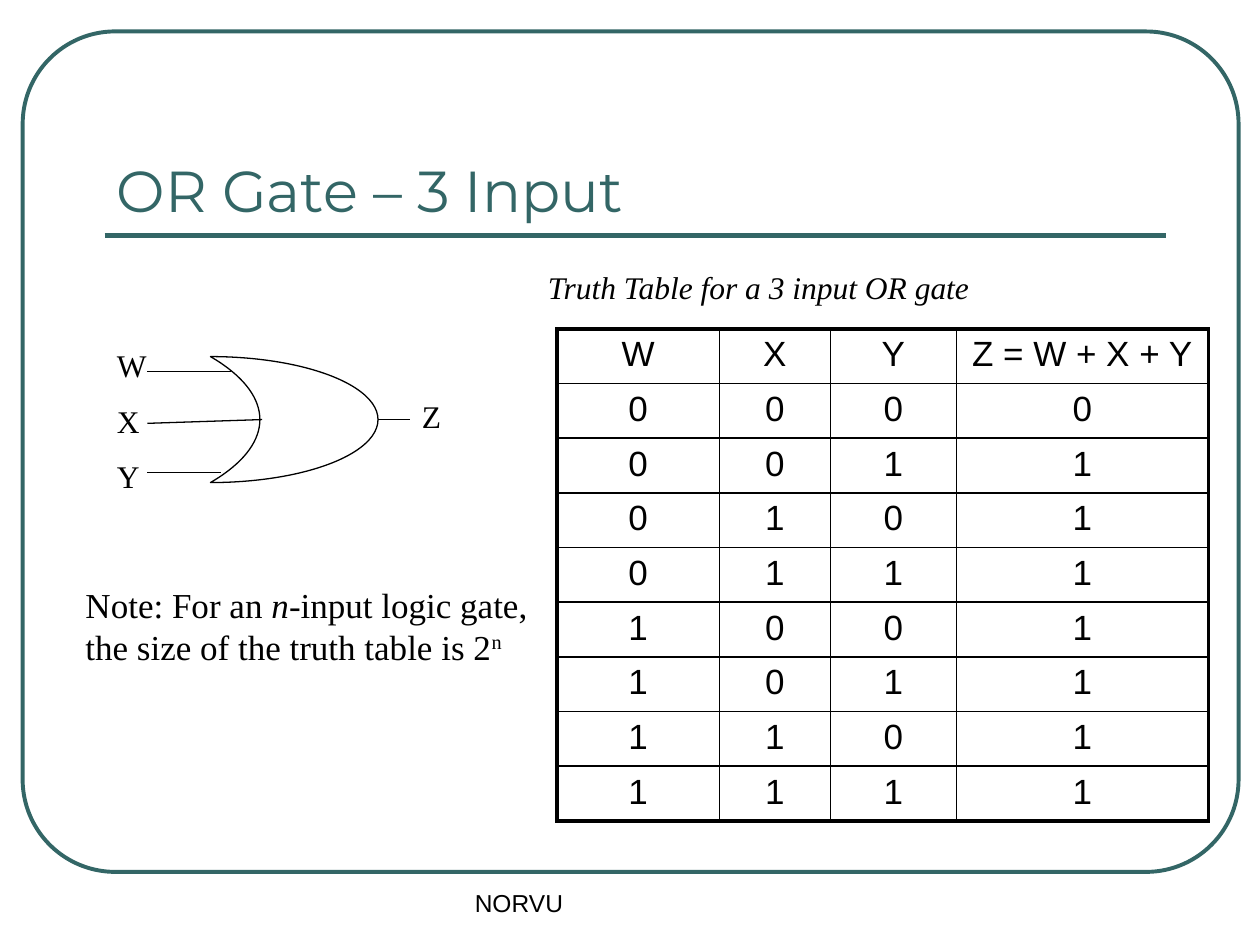
from itertools import product

from lxml import etree
from pptx import Presentation
from pptx.dml.color import RGBColor
from pptx.enum.shapes import MSO_CONNECTOR as Connector, MSO_SHAPE as Shape
from pptx.enum.text import MSO_ANCHOR as Anchor, PP_ALIGN as Align
from pptx.oxml.ns import qn
from pptx.util import Inches, Pt

TEAL, BLACK = "336666", "000000"
SERIF = "Times New Roman"


def color(hex_string):
    return RGBColor.from_string(hex_string)


def add_text(box, paragraphs, size, font=SERIF, ink=BLACK, anchor=Anchor.TOP):
    """Add a wrapped text box; each paragraph is a list of run texts."""
    frame = slide.shapes.add_textbox(*map(Inches, box)).text_frame
    frame.word_wrap = True
    frame.vertical_anchor = anchor
    for index, texts in enumerate(paragraphs):
        paragraph = frame.add_paragraph() if index else frame.paragraphs[0]
        if index:
            paragraph.space_before = Pt(10)
        for text in texts:
            run = paragraph.add_run()
            run.text = text
            run.font.size = Pt(size)
            run.font.name = font
            run.font.color.rgb = color(ink)
    return frame


presentation = Presentation()
presentation.slide_width = Inches(10)
presentation.slide_height = Inches(7.5)
slide = presentation.slides.add_slide(presentation.slide_layouts[6])

# Rounded frame and the body of the OR gate
for kind, box, adjustment, ink, width in (
    (Shape.ROUNDED_RECTANGLE, (0.18, 0.25, 9.65, 6.67), 0.11, TEAL, 2.25),
    (Shape.MOON, (1.67, 2.83, 1.33, 1), 0.705, BLACK, 0.75),
):
    shape = slide.shapes.add_shape(kind, *map(Inches, box))
    shape.adjustments[0] = adjustment
    shape.shadow.inherit = False
    shape.fill.background()
    shape.line.color.rgb = color(ink)
    shape.line.width = Pt(width)
    if kind == Shape.MOON:
        shape.rotation = 180

# Title rule, then the gate's inputs W, X, Y and its output Z
for ends, ink, width in (
    ((0.83, 1.87, 9.25, 1.87), TEAL, 3),
    ((1.17, 2.95, 1.83, 2.95), BLACK, 0.75),
    ((1.17, 3.36, 2.08, 3.33), BLACK, 0.75),
    ((1.17, 3.75, 1.75, 3.75), BLACK, 0.75),
    ((3, 3.33, 3.25, 3.33), BLACK, 0.75),
):
    line = slide.shapes.add_connector(Connector.STRAIGHT, *map(Inches, ends))
    line.line.color.rgb = color(ink)
    line.line.width = Pt(width)
    etree.SubElement(line._element.spPr, qn("a:effectLst"))

# Title, footer and gate labels
add_text((0.83, 0.58, 8.41, 1.25), [["OR Gate – 3 Input"]], 33,
         "Montserrat", TEAL, Anchor.BOTTOM)
add_text((3.67, 7, 3.16, 0.5), [["NORVU"]], 14, "Arial")
add_text((0.83, 2.7, 0.67, 1.3), [["W"], ["X"], ["Y"]], 18)
add_text((3.25, 3.1, 0.5, 0.4), [["Z"]], 18)

# Table caption and note
caption = add_text((4.25, 2.08, 5.5, 0.4),
                   [["Truth Table for a 3 input OR gate"]], 18)
caption.paragraphs[0].runs[0].font.italic = True
note = add_text((0.58, 4.58, 3.92, 0.77), [[
    "Note: For an ", "n",
    "-input logic gate, the size of the truth table is 2", "n"]], 20)
note_runs = note.paragraphs[0].runs
note_runs[1].font.italic = True
note_runs[3].font._element.set("baseline", "30000")

# Truth table: every input combination and its OR
rows = [("W", "X", "Y", "Z = W + X + Y")]
rows += [(*bits, max(bits)) for bits in product((0, 1), repeat=3)]
column_widths = (1.29, 0.88, 1, 2)
table = slide.shapes.add_table(
    len(rows), len(column_widths), Inches(4.42), Inches(2.61),
    Inches(sum(column_widths)), Inches(3.9)).table
table.first_row = table.horz_banding = False
for column, width in zip(table.columns, column_widths):
    column.width = Inches(width)

last_row, last_column = len(rows) - 1, len(column_widths) - 1
for row_index, values in enumerate(rows):
    for column_index, value in enumerate(values):
        cell = table.cell(row_index, column_index)
        cell.text_frame.text = str(value)
        paragraph = cell.text_frame.paragraphs[0]
        paragraph.alignment = Align.CENTER
        font = paragraph.runs[0].font
        font.size = Pt(20)
        font.name = "Arial"
        font.color.rgb = color(BLACK)

        # Thick outer borders, thin inner ones
        properties = cell._tc.get_or_add_tcPr()
        for side, is_outer in (
            ("L", column_index == 0), ("R", column_index == last_column),
            ("T", row_index == 0), ("B", row_index == last_row),
        ):
            border = etree.SubElement(properties, qn(f"a:ln{side}"),
                                      w=str(Pt(2.25 if is_outer else 1)))
            fill = etree.SubElement(border, qn("a:solidFill"))
            etree.SubElement(fill, qn("a:srgbClr"), val=BLACK)
        cell.fill.background()

presentation.save("out.pptx")
